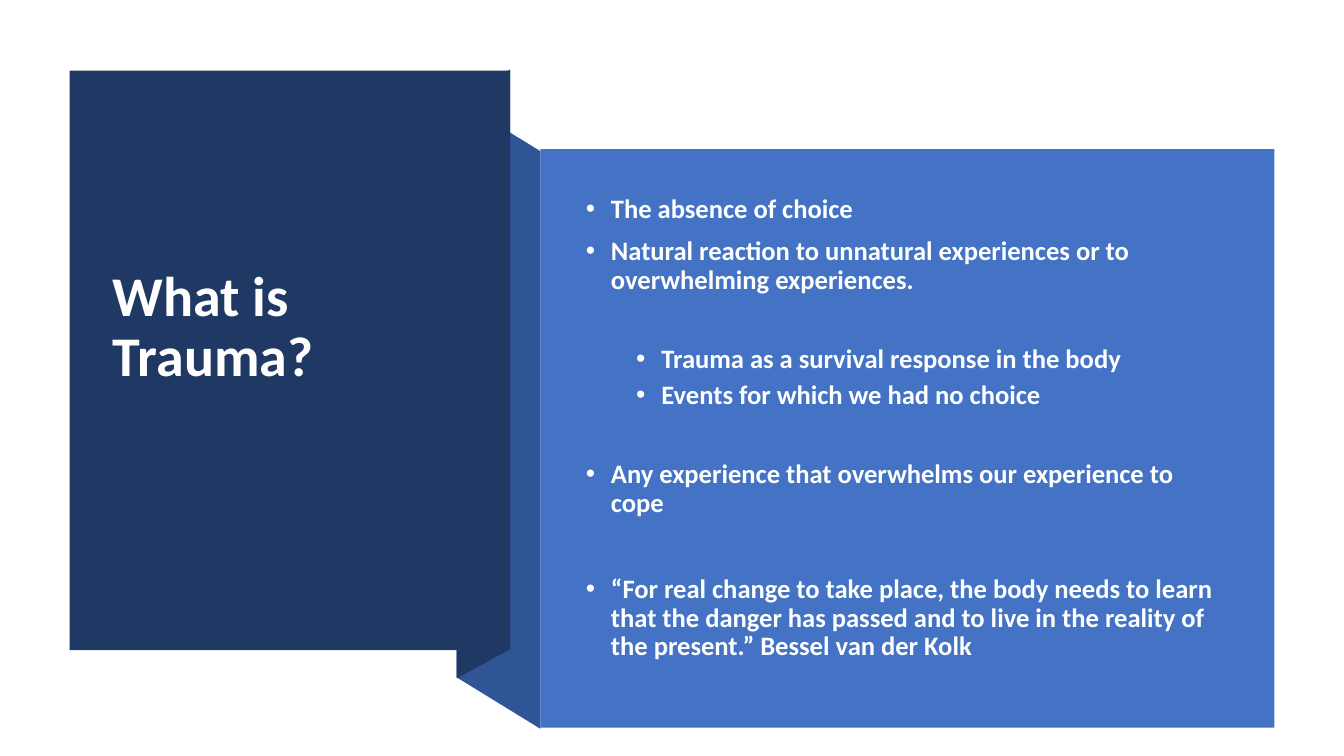
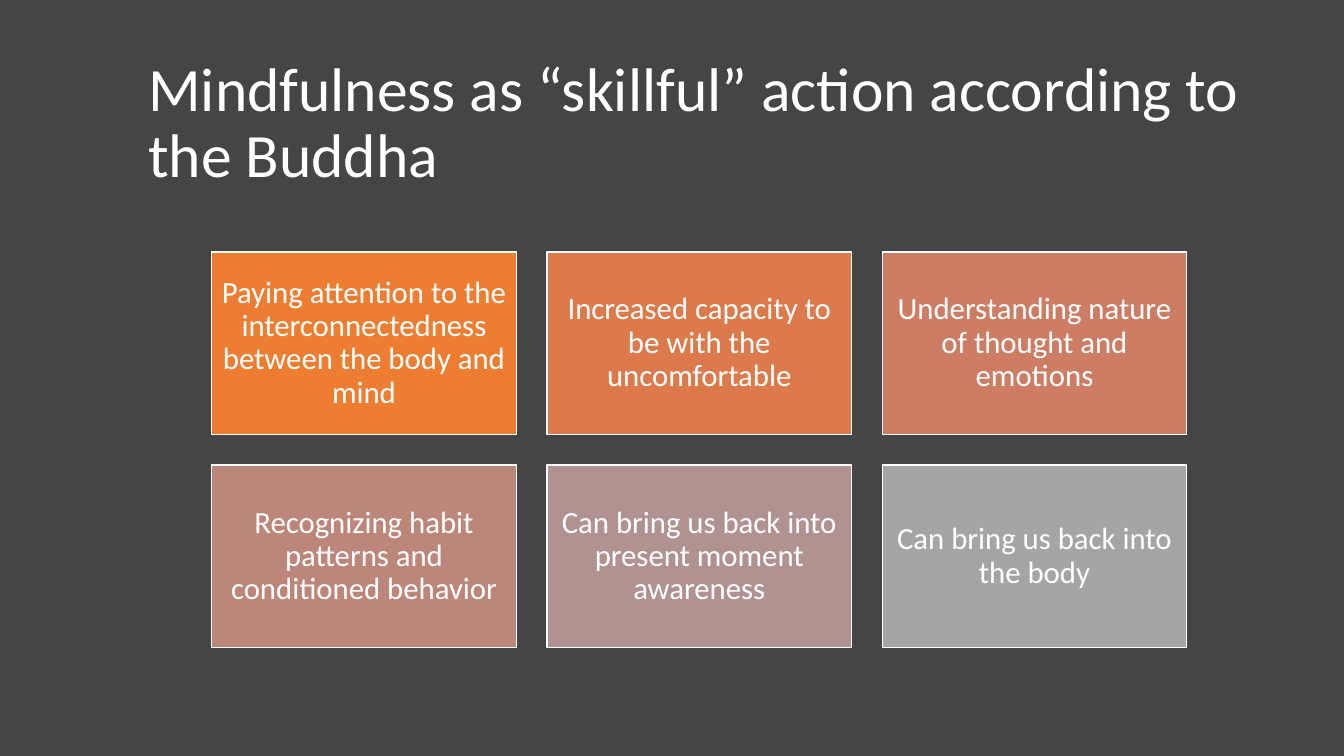
from dataclasses import dataclass

from lxml.etree import SubElement
from pptx import Presentation
from pptx.dml.color import RGBColor
from pptx.enum.shapes import MSO_SHAPE
from pptx.enum.text import MSO_ANCHOR, MSO_AUTO_SIZE, PP_ALIGN
from pptx.oxml.ns import qn
from pptx.util import Inches, Pt

FONT = "Calibri"
LINE_SPACING = 0.9
WHITE = RGBColor(0xFF, 0xFF, 0xFF)
OFF_WHITE = RGBColor(0xFE, 0xFF, 0xFF)
CHARCOAL = RGBColor(0x45, 0x45, 0x45)
NAVY = RGBColor(0x20, 0x38, 0x64)
MID_BLUE = RGBColor(0x2F, 0x55, 0x97)
BLUE = RGBColor(0x44, 0x72, 0xC4)

TITLE_AND_BODY = 1
TITLE_ONLY = 5

TILE_COLUMNS = 3
TILE_LEFT, TILE_TOP = 2.1, 2.5
TILE_WIDTH, TILE_HEIGHT = 3.02, 1.81
GRID_WIDTH = 9.67
TILE_GAP = (GRID_WIDTH - TILE_COLUMNS * TILE_WIDTH) / (TILE_COLUMNS - 1)


@dataclass(frozen=True)
class Box:
    left: float
    top: float
    width: float
    height: float

    def lengths(self):
        return [Inches(v) for v in (self.left, self.top, self.width, self.height)]


@dataclass(frozen=True)
class Bullet:
    text: str
    level: int = 0
    space_before: float = 10


@dataclass(frozen=True)
class Fold:
    corners: tuple
    color: RGBColor


@dataclass(frozen=True)
class Tile:
    text: str
    color: RGBColor


FOLDS = (
    Fold(((5.36, 7.23), (4.53, 6.72), (4.53, 0.99), (5.36, 1.5)), MID_BLUE),
    Fold(((5.06, 6.44), (4.53, 6.73), (4.53, 0.98), (5.06, 0.69)), NAVY),
)

TRAUMA_BULLETS = (
    Bullet("The absence of choice"),
    Bullet("Natural reaction to unnatural experiences or to overwhelming experiences."),
    Bullet("Trauma as a survival response in the body", 1, 36),
    Bullet("Events for which we had no choice", 1, 5),
    Bullet("Any experience that overwhelms our experience to cope", 0, 36),
    Bullet(
        "“For real change to take place, the body needs to learn that the danger "
        "has passed and to live in the reality of the present.” Bessel van der Kolk",
        0,
        41,
    ),
)

MINDFULNESS_TILES = (
    Tile("Paying attention to the interconnectedness between the body and mind",
         RGBColor(0xED, 0x7D, 0x31)),
    Tile("Increased capacity to be with the uncomfortable", RGBColor(0xDC, 0x7A, 0x4B)),
    Tile("Understanding nature of thought and emotions", RGBColor(0xCC, 0x7D, 0x64)),
    Tile("Recognizing habit patterns and conditioned behavior", RGBColor(0xBD, 0x86, 0x7B)),
    Tile("Can bring us back into present moment awareness", RGBColor(0xB0, 0x93, 0x91)),
    Tile("Can bring us back into the body", RGBColor(0xA5, 0xA5, 0xA5)),
)


def style_paragraph(paragraph, size: float, color: RGBColor, bold: bool, align) -> None:
    paragraph.alignment = align
    paragraph.line_spacing = LINE_SPACING
    for run in paragraph.runs:
        run.font.name = FONT
        run.font.size = Pt(size)
        run.font.bold = bold
        run.font.color.rgb = color


def place(placeholder, box: Box):
    placeholder.left, placeholder.top, placeholder.width, placeholder.height = box.lengths()
    frame = placeholder.text_frame
    frame.word_wrap = True
    frame.auto_size = MSO_AUTO_SIZE.NONE
    frame.vertical_anchor = MSO_ANCHOR.MIDDLE
    placeholder.element.getparent().append(placeholder.element)
    return frame


def set_title(slide, text: str, box: Box, size: float, bold: bool) -> None:
    frame = place(slide.shapes.title, box)
    frame.text = text
    style_paragraph(frame.paragraphs[0], size, WHITE, bold, PP_ALIGN.LEFT)


def set_bullets(slide, bullets: tuple, box: Box) -> None:
    frame = place(slide.placeholders[1], box)
    for index, bullet in enumerate(bullets):
        paragraph = frame.add_paragraph() if index else frame.paragraphs[0]
        paragraph.text = bullet.text
        paragraph.level = bullet.level
        paragraph.space_before = Pt(bullet.space_before)
        style_paragraph(paragraph, 19, OFF_WHITE, True, PP_ALIGN.LEFT)
        properties = paragraph.runs[0].font and paragraph._p.get_or_add_pPr()
        properties.set("marL", str(Inches(0.25 + 0.5 * bullet.level)))
        properties.set("indent", str(Inches(-0.25)))
        SubElement(properties, qn("a:buFont"), typeface="Arial")
        SubElement(properties, qn("a:buChar"), char="•")


def paint(shape, color: RGBColor) -> None:
    shape.shadow.inherit = False
    shape.fill.solid()
    shape.fill.fore_color.rgb = color
    shape.line.fill.background()


def add_panel(slide, box: Box, color: RGBColor):
    panel = slide.shapes.add_shape(MSO_SHAPE.RECTANGLE, *box.lengths())
    paint(panel, color)
    return panel


def add_fold(slide, fold: Fold) -> None:
    start, *others = [(Inches(x), Inches(y)) for x, y in fold.corners]
    outline = slide.shapes.build_freeform(*start)
    outline.add_line_segments(others, close=True)
    paint(outline.convert_to_shape(), fold.color)


def add_tile(slide, tile: Tile, box: Box) -> None:
    panel = add_panel(slide, box, tile.color)
    panel.line.color.rgb = WHITE
    panel.line.width = Pt(1)
    frame = panel.text_frame
    frame.word_wrap = True
    frame.vertical_anchor = MSO_ANCHOR.MIDDLE
    frame.margin_left = frame.margin_right = Inches(0.09)
    frame.margin_top = frame.margin_bottom = Inches(0.09)
    frame.text = tile.text
    style_paragraph(frame.paragraphs[0], 22, WHITE, False, PP_ALIGN.CENTER)


def add_slide(deck, layout: int, background: RGBColor):
    slide = deck.slides.add_slide(deck.slide_layouts[layout])
    slide.background.fill.solid()
    slide.background.fill.fore_color.rgb = background
    return slide


def build_trauma(deck) -> None:
    slide = add_slide(deck, TITLE_AND_BODY, WHITE)
    for fold in FOLDS:
        add_fold(slide, fold)
    add_panel(slide, Box(0.69, 0.7, 4.37, 5.75), NAVY)
    set_title(slide, "What is Trauma?", Box(1.02, 1.07, 3.71, 4.38), 40, True)
    add_panel(slide, Box(5.36, 1.48, 7.28, 5.74), BLUE)
    set_bullets(slide, TRAUMA_BULLETS, Box(5.71, 1.88, 6.51, 4.74))


def build_mindfulness(deck) -> None:
    slide = add_slide(deck, TITLE_ONLY, CHARCOAL)
    set_title(slide, "Mindfulness as “skillful” action according to the Buddha",
              Box(1.37, 0.42, 11.13, 1.63), 44, False)
    for index, tile in enumerate(MINDFULNESS_TILES):
        row, column = divmod(index, TILE_COLUMNS)
        left = TILE_LEFT + column * (TILE_WIDTH + TILE_GAP)
        top = TILE_TOP + row * (TILE_HEIGHT + TILE_GAP)
        add_tile(slide, tile, Box(left, top, TILE_WIDTH, TILE_HEIGHT))


def main() -> None:
    deck = Presentation()
    deck.slide_width, deck.slide_height = Inches(13.33), Inches(7.5)
    build_trauma(deck)
    build_mindfulness(deck)
    deck.save("out.pptx")


if __name__ == "__main__":
    main()
